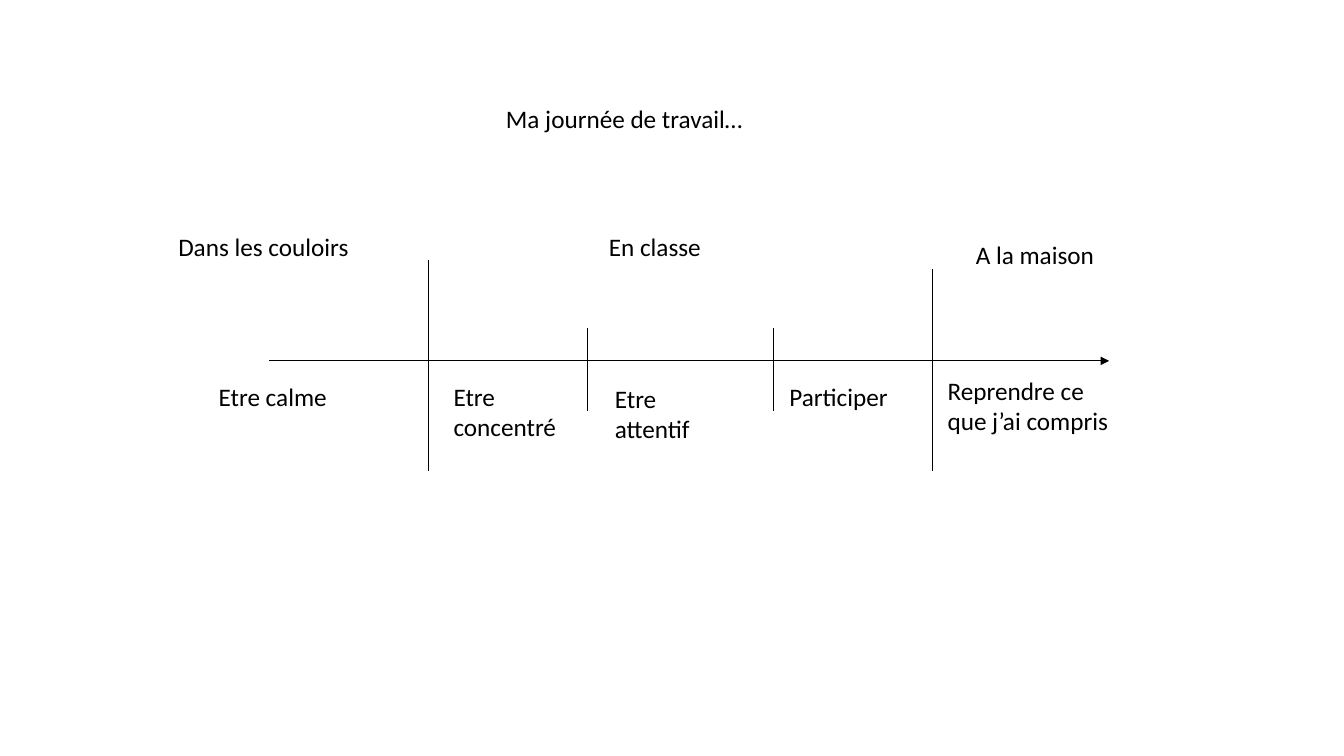
from pptx import Presentation
from pptx.dml.color import RGBColor
from pptx.enum.shapes import MSO_CONNECTOR as Connector
from pptx.enum.text import MSO_AUTO_SIZE as AutoSize
from pptx.oxml.ns import qn
from pptx.util import Inches, Pt
from lxml.etree import SubElement

COLORS = {"ink": "000000", "background": "FFFFFF"}
AXIS_Y = 3.58
DIVIDERS = [(4.25, 2.58, 4.67), (9.25, 2.67, 4.67)]
TICKS = [(x, 3.25, 4.08) for x in (5.83, 7.67)]
WRAPPED_LABELS = [
    (4.92, 0.98, 3.5, ["Ma journée de travail…"]),
    (1.67, 2.25, 2.83, ["Dans les couloirs"]),
]
FITTED_LABELS = [
    (5.94, 2.25, 1.12, ["En classe"]),
    (9.58, 2.33, 1.39, ["A la maison"]),
    (2.07, 3.73, 1.29, ["Etre calme"]),
    (4.4, 3.73, 1.23, ["Etre", "concentré"]),
    (6, 3.75, 0.96, ["Etre", "attentif"]),
    (7.73, 3.73, 1.19, ["Participer"]),
    (9.3, 3.67, 1.81, ["Reprendre ce", "que j’ai compris"]),
]


class TimelineSlide:
    """Draw timeline lines and labels in one style on a slide."""

    font_name = "Calibri"
    font_size = Pt(18)
    line_width = Pt(0.75)

    def __init__(self, slide):
        self.slide = slide
        self.ink = RGBColor.from_string(COLORS["ink"])
        fill = slide.background.fill
        fill.solid()
        fill.fore_color.rgb = RGBColor.from_string(COLORS["background"])

    def line(self, x1, y1, x2, y2, arrow=False):
        connector = self.slide.shapes.add_connector(
            Connector.STRAIGHT, Inches(x1), Inches(y1), Inches(x2), Inches(y2))
        connector.line.color.rgb = self.ink
        connector.line.width = self.line_width
        properties = connector._element.spPr
        if arrow:
            SubElement(properties.find(qn("a:ln")), qn("a:tailEnd"), type="triangle")
        SubElement(properties, qn("a:effectLst"))

    def label(self, left, top, width, lines, wrap=False):
        height = 0.1 + 0.3 * len(lines)
        shape = self.slide.shapes.add_textbox(
            Inches(left), Inches(top), Inches(width), Inches(height))
        frame = shape.text_frame
        frame.word_wrap = wrap
        frame.auto_size = AutoSize.SHAPE_TO_FIT_TEXT
        for index, text in enumerate(lines):
            paragraph = frame.add_paragraph() if index else frame.paragraphs[0]
            run = paragraph.add_run()
            run.text = text
            run.font.name = self.font_name
            run.font.size = self.font_size
            run.font.color.rgb = self.ink


def main():
    presentation = Presentation()
    presentation.slide_width = Inches(13.33)
    presentation.slide_height = Inches(7.5)
    timeline = TimelineSlide(presentation.slides.add_slide(presentation.slide_layouts[6]))

    timeline.line(2.67, AXIS_Y, 11, AXIS_Y, arrow=True)
    for x, top, bottom in DIVIDERS + TICKS:
        timeline.line(x, top, x, bottom)
    for label in WRAPPED_LABELS:
        timeline.label(*label, wrap=True)
    for label in FITTED_LABELS:
        timeline.label(*label)

    presentation.save("out.pptx")


if __name__ == "__main__":
    main()
